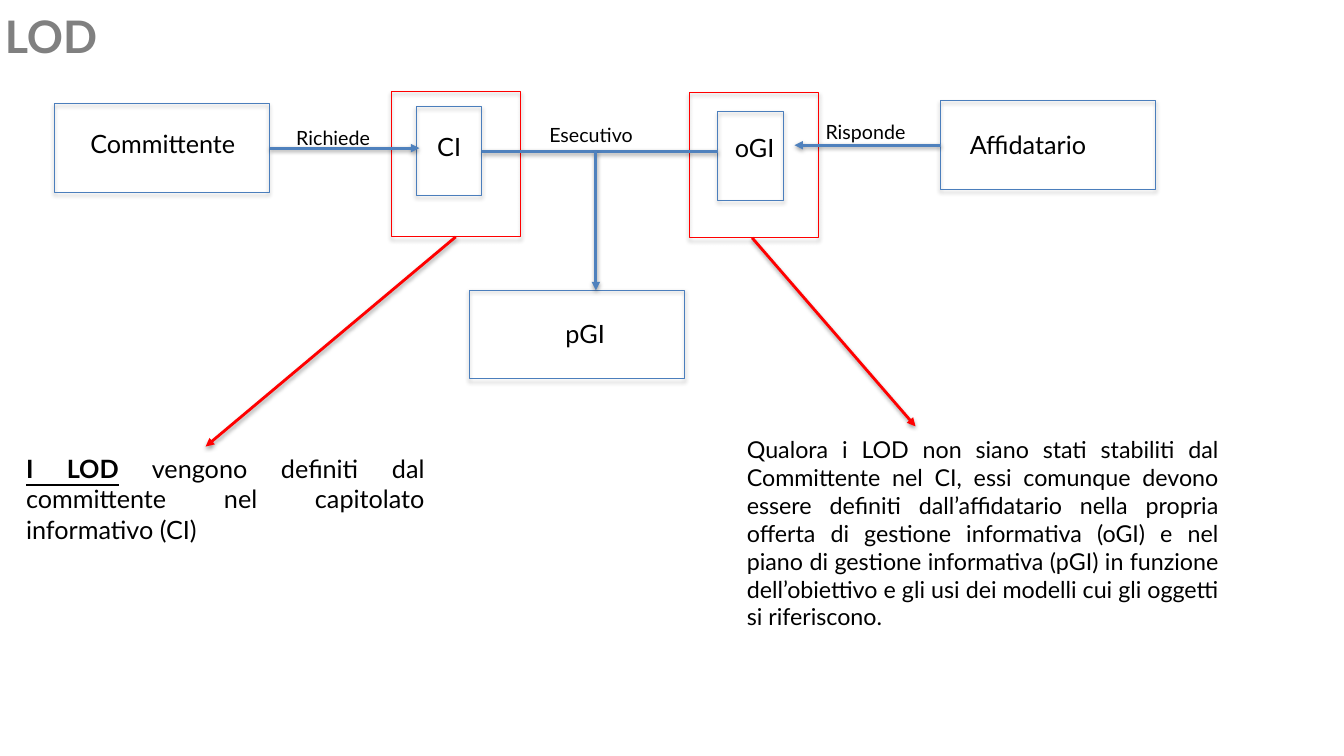
from collections import namedtuple
from dataclasses import dataclass

from lxml.etree import SubElement
from pptx import Presentation
from pptx.dml.color import RGBColor
from pptx.enum.shapes import MSO_CONNECTOR, MSO_SHAPE
from pptx.enum.text import PP_ALIGN
from pptx.oxml.ns import qn
from pptx.util import Pt

PX = 9144
Box = namedtuple("Box", "left top width height")


@dataclass(frozen=True)
class Theme:
    font: str = "Lato"
    ink: RGBColor = RGBColor(0, 0, 0)
    heading: RGBColor = RGBColor(0x80, 0x80, 0x80)
    outline: RGBColor = RGBColor(0x4B, 0x7E, 0xBC)
    flow: RGBColor = RGBColor(0x4F, 0x81, 0xBD)
    accent: RGBColor = RGBColor(0xFF, 0, 0)
    heading_size: float = 32
    body_size: float = 18
    note_size: float = 16.6
    link_size: float = 14
    outline_width: float = 0.75
    flow_width: float = 2


THEME = Theme()


def emu(lengths):
    return [length * PX for length in lengths]


def add_shadow(item, opacity, distance):
    properties = item._element.spPr
    for old in properties.findall(qn("a:effectLst")):
        properties.remove(old)
    effects = SubElement(properties, qn("a:effectLst"))
    shadow = SubElement(effects, qn("a:outerShdw"), blurRad=str(Pt(3.1)),
                        dist=str(Pt(distance)), dir="5400000", rotWithShape="0")
    color = SubElement(shadow, qn("a:srgbClr"), val="000000")
    SubElement(color, qn("a:alpha"), val=str(opacity * 1000))


def add_frame(page, box, color=THEME.outline):
    frame = page.shapes.add_shape(MSO_SHAPE.RECTANGLE, *emu(box))
    frame.fill.background()
    frame.line.color.rgb = color
    frame.line.width = Pt(THEME.outline_width)
    add_shadow(frame, 35, 1.8)


def add_text(page, box, text, size, align=PP_ALIGN.JUSTIFY, color=THEME.ink, bold=False, lead=""):
    frame = page.shapes.add_textbox(*emu(box)).text_frame
    frame.word_wrap = True
    para = frame.paragraphs[0]
    para.alignment = align
    if lead:
        span = para.add_run()
        span.text = lead
        span.font.bold = span.font.underline = True
    para.add_run().text = text
    para.font.name = THEME.font
    para.font.size = Pt(size)
    para.font.color.rgb = color
    para.font.bold = bold


def add_flow(page, start, end, color=THEME.flow, arrow=True):
    line = page.shapes.add_connector(MSO_CONNECTOR.STRAIGHT, *emu(start + end))
    line.line.color.rgb = color
    line.line.width = Pt(THEME.flow_width)
    if arrow:
        SubElement(line.line._get_or_add_ln(), qn("a:tailEnd"), type="triangle")
    add_shadow(line, 38, 1.6)


def header(page, box, text):
    add_text(page, box, text, THEME.heading_size, PP_ALIGN.LEFT, THEME.heading, True)


def node(page, box, name, shift, width=291, align=PP_ALIGN.CENTER):
    add_frame(page, box)
    label = Box(box.left + shift[0], box.top + shift[1], width, 78)
    add_text(page, label, name, THEME.body_size, align)


def document(page, box, name, core_shift, label_shift, tail_shift, target):
    core = Box(box.left + core_shift[0], box.top + core_shift[1], 65, 88)
    node(page, core, name, label_shift)
    add_frame(page, box, THEME.accent)
    add_flow(page, (box.left + tail_shift, box.top + box.height), target, THEME.accent)


def link(page, start, end, name, shift, arrow=True):
    add_flow(page, start, end, arrow=arrow)
    label = Box(min(start[0], end[0]) + shift[0], start[1] + shift[1], 194, 78)
    add_text(page, label, name, THEME.link_size)


def exchange(page, box):
    left, top, width, height = box
    node(page, Box(left, top + 12, 213, 88), "Committente", (-38, 19))
    node(page, Box(left + width - 213, top + 9, 213, 88), "Affidatario", (19, 23),
         194, PP_ALIGN.JUSTIFY)
    node(page, Box(left + 412, top + height - 88, 213, 88), "pGI", (85, 23),
         194, PP_ALIGN.JUSTIFY)
    document(page, Box(left + 334, top, 128, 144), "CI", (25, 15), (-113, 19), 64,
             (left + 150, top + 352))
    document(page, Box(left + 630, top + 1, 128, 144), "oGI", (28, 19), (-109, 15), 62,
             (left + 854, top + 332))
    link(page, (left + 214, top + 56), (left + 362, top + 56), "Richiede", (16, -27))
    link(page, (left + 879, top + 53), (left + 734, top + 53), "Risponde", (21, -30))
    link(page, (left + 424, top + 59), (left + 658, top + 59), "Esecutivo", (57, -33), False)
    add_flow(page, (left + 537, top + 59), (left + 537, top + height - 88))


def main():
    deck = Presentation()
    deck.slide_width, deck.slide_height = emu((1333, 750))
    page = deck.slides.add_slide(deck.slide_layouts[6])
    header(page, Box(-5, 4, 1084, 64), "LOD")
    exchange(page, Box(54, 91, 1092, 285))
    add_text(page, Box(16, 445, 415, 247),
             " vengono definiti dal committente nel capitolato informativo (CI)",
             THEME.body_size, lead="I LOD")
    add_text(page, Box(731, 427, 487, 284),
             "Qualora i LOD non siano stati stabiliti dal Committente nel CI, essi comunque "
             "devono essere definiti dall’affidatario nella propria offerta di gestione "
             "informativa (oGI) e nel piano di gestione informativa (pGI) in funzione "
             "dell’obiettivo e gli usi dei modelli cui gli oggetti si riferiscono.",
             THEME.note_size)
    deck.save("out.pptx")


if __name__ == "__main__":
    main()
